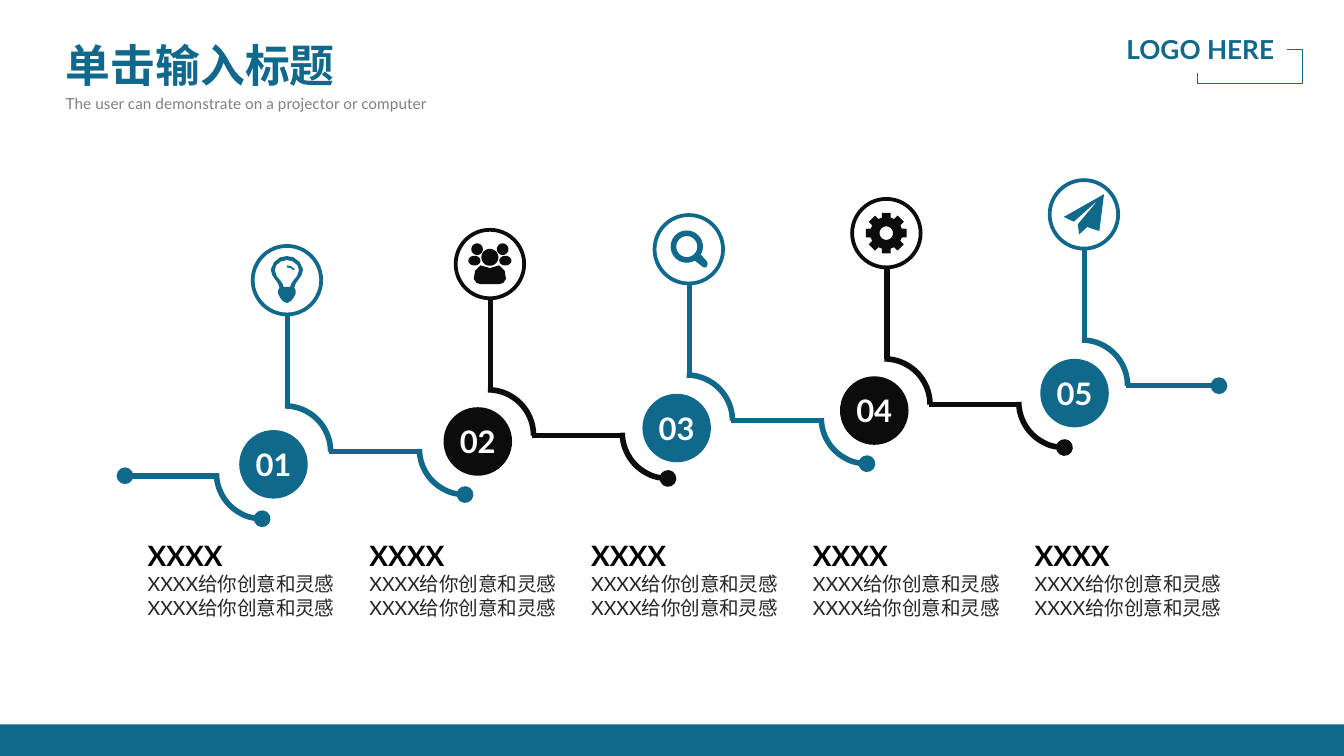
"""Build a slide with five rising steps joined by curved lines."""
from math import cos, radians, sin

from lxml import etree
from pptx import Presentation
from pptx.dml.color import RGBColor
from pptx.enum.shapes import MSO_CONNECTOR, MSO_SHAPE
from pptx.enum.text import MSO_ANCHOR, MSO_AUTO_SIZE, PP_ALIGN
from pptx.oxml.ns import qn
from pptx.util import Inches, Pt

OVAL, ARC, BAR = MSO_SHAPE.OVAL, MSO_SHAPE.ARC, MSO_SHAPE.RECTANGLE
STRAIGHT = MSO_CONNECTOR.STRAIGHT
LEFT, CENTER, RIGHT = PP_ALIGN.LEFT, PP_ALIGN.CENTER, PP_ALIGN.RIGHT
TOP, MIDDLE = MSO_ANCHOR.TOP, MSO_ANCHOR.MIDDLE
NO_FIT = MSO_AUTO_SIZE.NONE

COLORS = {"teal": "10688B", "black": "0C0C0C", "white": "FFFFFF",
          "heading": "000000", "body": "262626", "grey": "808080"}
COLUMN = ROW = Inches(0.01)
ARC_SIZE, BADGE, STEM = 68, 51, 69


def write(shape, text, size, color, bold=False, align=LEFT, anchor=TOP,
          wrap=True, spacing=None, new=False):
    frame = shape.text_frame
    frame.word_wrap, frame.vertical_anchor, frame.auto_size = wrap, anchor, NO_FIT
    paragraph = frame.add_paragraph() if new else frame.paragraphs[0]
    paragraph.alignment = align
    if spacing:
        paragraph.line_spacing = spacing
    run = paragraph.add_run()
    run.text = text
    run.font.name, run.font.size, run.font.bold = "Lato", Pt(size), bold
    run.font.color.rgb = RGBColor.from_string(COLORS[color])


def paint(shape, fill=None, line=None, weight=3, dot=False):
    if hasattr(shape, "fill"):
        if fill:
            shape.fill.solid()
            shape.fill.fore_color.rgb = RGBColor.from_string(COLORS[fill])
        else:
            shape.fill.background()
    if line:
        shape.line.color.rgb = RGBColor.from_string(COLORS[line])
        shape.line.width = Pt(weight)
    else:
        shape.line.fill.background()
    properties = shape._element.spPr
    if dot:
        etree.SubElement(properties.find(qn("a:ln")), qn("a:headEnd"), type="oval")
    etree.SubElement(properties, qn("a:effectLst"))


presentation = Presentation()
presentation.slide_width = 1000 * COLUMN
presentation.slide_height = presentation.slide_width * 9 // 16
slide = presentation.slides.add_slide(presentation.slide_layouts[5])
shapes = slide.shapes

title = shapes.title
title.left, title.top = 39 * COLUMN, 23 * ROW
title.width, title.height = 223 * COLUMN, 50 * ROW
write(title, "单击输入标题", 24, "teal", bold=True)

subtitle = shapes.add_textbox(39 * COLUMN, 63 * ROW, 538 * COLUMN, 25 * ROW)
write(subtitle, "The user can demonstrate on a projector or computer", 8.25, "grey",
      spacing=1.14)

logo_label = shapes.add_textbox(824 * COLUMN, 20 * ROW, 134 * COLUMN, 34 * ROW)
write(logo_label, "LOGO HERE", 14, "teal", bold=True, align=RIGHT)
bracket = shapes.build_freeform(891, 54, scale=COLUMN)
bracket.add_line_segments([(891, 62), (969, 62), (969, 37), (958, 37)], close=False)
paint(bracket.convert_to_shape(), line="teal", weight=0.75)

bulb_outer = [(0, -18), (5, -17), (9.5, -13.5), (12, -8), (11, -4), (9, -1), (6.5, 2.5),
              (5.5, 5.5), (6.5, 7.5), (6.5, 10), (5, 13), (3, 15.5), (0, 17)]
bulb_inner = [(0, -15), (4.5, -14), (8, -11), (9, -7.5), (7.5, -3), (5, 0), (3, 3),
              (2.5, 5)]
bulb = [half + [(-x, y) for x, y in reversed(half)] for half in (bulb_outer, bulb_inner)]
glint = [(0, -11), (3, -10.5), (5.5, -8.5), (5.5, -7.5), (4.5, -7.5), (3, -9), (0, -9.5)]
body = [(-12, 11), (-11, 5), (-7, 1), (0, 3), (7, 1), (11, 5), (12, 11), (10, 14),
        (7, 15), (-7, 15), (-10, 14)]
handle = [(9, 4), (13.5, 9), (14, 11), (13, 13.5), (11, 13.5), (4.5, 8.5), (7, 6.5)]
gear = [(radius * cos(radians(tooth + turn)), radius * sin(radians(tooth + turn)))
        for tooth in range(0, 360, 45)
        for turn, radius in ((-16, 12), (-12, 15.5), (12, 15.5), (16, 12))]
plane = [(15, -15), (11.5, 12.5), (2.5, 9.5), (-3.5, 15), (-4.5, 7.5), (10.5, -10.5),
         (-7.5, 5.5), (-15, 2)]
people = [(0, -5, 6.3, 6.3), (-9.5, -11, 4.3, 4.3), (9.5, -11, 4.3, 4.3),
          (-11.5, -2.5, 4.5, 3.6), (11.5, -2.5, 4.5, 3.6)]
lens = [(-1.5, -2, 12, 12), (-1.5, -2, 7.8, 7.8)]

steps = [
    ("teal", 178, 302, 178, 320, bulb + [glint], []),
    ("black", 329, 290, 330, 303, [body], people),
    ("teal", 477, 279, 478, 293, [handle], lens),
    ("black", 624, 267, 625, 280, [gear], [(0, 0, 5, 5)]),
    ("teal", 771, 253, 774, 267, [plane], []),
]

lines = [("teal", 93, 354, 162, 354, True)]
arcs = [("teal", 161, 318, 180)]
for number, (color, left, top, *_) in enumerate(steps, 1):
    last = number == len(steps)
    level = top + ARC_SIZE // 2
    ends = (left + 136, level, left + 67, level)
    lines += [(color, left + 36, top - STEM, left + 36, top, False), (color, *ends, last)]
    arcs.append((color, left, top, 0))
    if not last:
        arcs.append((color, left + 134, top - 2, 180))

for color, *ends, dot in lines:
    line = shapes.add_connector(STRAIGHT, *[end * COLUMN for end in ends])
    paint(line, line=color, dot=dot)
for color, left, top, rotation in arcs:
    arc = shapes.add_shape(ARC, left * COLUMN, top * ROW, ARC_SIZE * COLUMN, ARC_SIZE * ROW)
    arc.rotation = rotation
    paint(arc, line=color, dot=rotation == 180)

for index, (color, left, top, badge_left, badge_top, polygons, ovals) in enumerate(steps):
    badge = shapes.add_shape(OVAL, badge_left * COLUMN, badge_top * ROW,
                             BADGE * COLUMN, BADGE * ROW)
    paint(badge, fill=color)
    write(badge, f"{index + 1:02}", 16.6, "white", bold=True, align=CENTER,
          anchor=MIDDLE, wrap=False)

    pin = shapes.add_shape(OVAL, (left + 10) * COLUMN, (top - 119) * ROW,
                           BADGE * COLUMN, BADGE * ROW)
    paint(pin, fill="white", line=color, weight=2)
    center_x, center_y = pin.left + pin.width / 2, pin.top + pin.height / 2
    contours = polygons + [
        [(x + rx * cos(radians(angle)), y + ry * sin(radians(angle)))
         for angle in range(0, 360, 10)] for x, y, rx, ry in ovals]
    contours = [[(center_x + x * COLUMN, center_y + y * ROW) for x, y in contour]
                for contour in contours]
    icon = shapes.build_freeform(*contours[0][0])
    for contour in contours:
        if contour is not contours[0]:
            icon.move_to(*contour[0])
        icon.add_line_segments(contour[1:])
    paint(icon.convert_to_shape(), fill=color)

    label = shapes.add_textbox((100 + 165 * index) * COLUMN, 396 * ROW,
                               168 * COLUMN, 71 * ROW)
    write(label, "XXXX", 15, "heading", bold=True)
    write(label, "XXXX给你创意和灵感" * 2, 10.5, "body", new=True)

footer_top = 539 * ROW
footer = shapes.add_shape(BAR, 0, footer_top, presentation.slide_width,
                          presentation.slide_height - footer_top)
paint(footer, fill="teal")

presentation.save("out.pptx")
